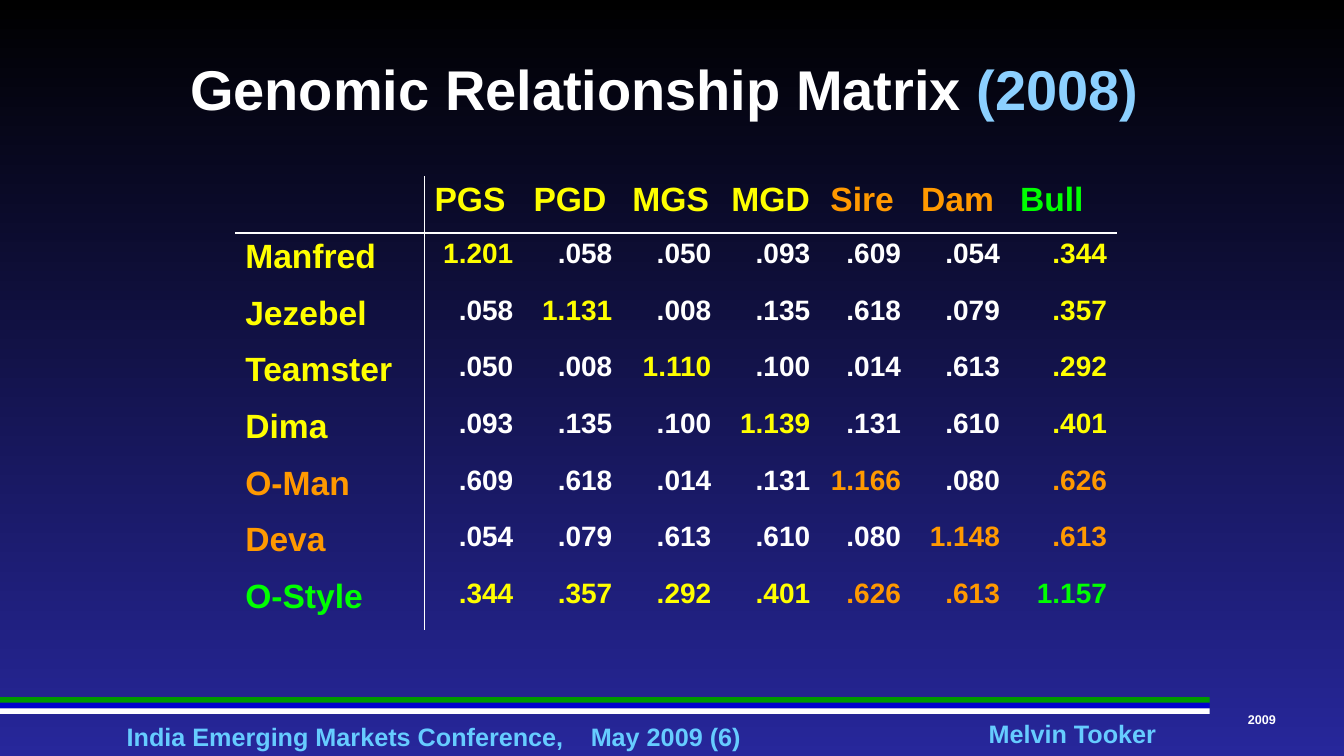
from lxml.etree import SubElement
from pptx import Presentation
from pptx.dml.color import RGBColor
from pptx.enum.shapes import MSO_SHAPE as Shape
from pptx.enum.text import MSO_ANCHOR as Anchor, MSO_AUTO_SIZE as AutoSize, PP_ALIGN as Align
from pptx.oxml.ns import qn
from pptx.util import Pt

BLACK = RGBColor(0x00, 0x00, 0x00)
NAVY = RGBColor(0x27, 0x27, 0x9B)
WHITE = RGBColor(0xFF, 0xFF, 0xFF)
YELLOW = RGBColor(0xFF, 0xFF, 0x00)
ORANGE = RGBColor(0xFF, 0x99, 0x00)
LIME = RGBColor(0x00, 0xFF, 0x00)
GREEN = RGBColor(0x00, 0x99, 0x00)
BLUE = RGBColor(0x00, 0x00, 0xCC)
SKY = RGBColor(0x66, 0xCC, 0xFF)
PALE_BLUE = RGBColor(0x8C, 0xD0, 0xFF)

FONT = "Arial"
ROLES = ["PGS", "PGD", "MGS", "MGD", "Sire", "Dam", "Bull"]
ANIMALS = ["Manfred", "Jezebel", "Teamster", "Dima", "O-Man", "Deva", "O-Style"]
GROUP_COLORS = [YELLOW] * 4 + [ORANGE] * 2 + [LIME]
RELATIONSHIPS = [
    "1.201 .058 .050 .093 .609 .054 .344",
    ".058 1.131 .008 .135 .618 .079 .357",
    ".050 .008 1.110 .100 .014 .613 .292",
    ".093 .135 .100 1.139 .131 .610 .401",
    ".609 .618 .014 .131 1.166 .080 .626",
    ".054 .079 .613 .610 .080 1.148 .613",
    ".344 .357 .292 .401 .626 .613 1.157",
]
COLUMN_WIDTHS = [135.2, 70.7, 70.7, 70.7, 70.7, 64.8, 70.7, 76.5]
ROW_HEIGHT = 40.5


def add_run(para, text, size, color):
    span = para.add_run()
    span.text = text
    font = span.font
    font.name, font.size, font.bold = FONT, Pt(size), True
    font.color.rgb = color


def paint_background(slide):
    fill = slide.background.fill
    fill.gradient()
    fill.gradient_angle = 270
    for stop, color in zip(fill.gradient_stops, (BLACK, NAVY)):
        stop.color.rgb = color


def add_stripe(slide, top, color):
    stripe = slide.shapes.add_shape(Shape.RECTANGLE, 0, Pt(top), Pt(864), Pt(4))
    stripe.shadow.inherit = False
    stripe.fill.solid()
    stripe.fill.fore_color.rgb = color
    stripe.line.fill.background()


def add_label(slide, bounds, text, size, color, align, tab=None):
    box = slide.shapes.add_textbox(*(Pt(length) for length in bounds))
    frame = box.text_frame
    frame.margin_left = frame.margin_right = frame.margin_top = frame.margin_bottom = 0
    frame.vertical_anchor = Anchor.MIDDLE
    frame.word_wrap = True
    para = frame.paragraphs[0]
    para.alignment = align
    if tab:
        tabs = SubElement(para._p.get_or_add_pPr(), qn("a:tabLst"))
        SubElement(tabs, qn("a:tab"), pos=str(Pt(tab)), algn="l")
    add_run(para, text, size, color)


def set_title(slide):
    title = slide.shapes.title
    title.left, title.top, title.width, title.height = Pt(24), Pt(18), Pt(912), Pt(90)
    frame = title.text_frame
    frame.vertical_anchor = Anchor.MIDDLE
    frame.auto_size = AutoSize.NONE
    para = frame.paragraphs[0]
    para.alignment = Align.CENTER
    add_run(para, "Genomic Relationship Matrix ", 40, WHITE)
    add_run(para, "(2008) ", 40, PALE_BLUE)


def set_borders(cell, drawn):
    properties = cell._tc.get_or_add_tcPr()
    for side in "LRTB":
        line = SubElement(properties, qn(f"a:ln{side}"), w=str(Pt(1)))
        if side in drawn:
            fill = SubElement(line, qn("a:solidFill"))
            SubElement(fill, qn("a:srgbClr"), val=str(WHITE))
        else:
            SubElement(line, qn("a:noFill"))


def cell_content(row, column, values):
    animal, role = row - 1, column - 1
    if row == 0:
        return ROLES[role], 24, GROUP_COLORS[role], Align.LEFT
    if column == 0:
        return ANIMALS[animal], 24, GROUP_COLORS[animal], Align.LEFT
    bull = len(ROLES) - 1
    highlighted = animal == role or bull in (animal, role)
    color = GROUP_COLORS[min(animal, role)] if highlighted else WHITE
    return values[animal][role], 20, color, Align.RIGHT


def add_matrix(slide):
    count = len(ROLES) + 1
    table = slide.shapes.add_table(
        count, count, Pt(168), Pt(126), Pt(sum(COLUMN_WIDTHS)), Pt(ROW_HEIGHT * count)
    ).table
    table.first_row = table.horz_banding = False
    for column, width in zip(table.columns, COLUMN_WIDTHS):
        column.width = Pt(width)
    for row in table.rows:
        row.height = Pt(ROW_HEIGHT)
    values = [line.split() for line in RELATIONSHIPS]
    for row in range(count):
        for column in range(count):
            cell = table.cell(row, column)
            set_borders(cell, {0: "B", 1: "T"}.get(row, "") + {0: "R", 1: "L"}.get(column, ""))
            cell.fill.background()
            if row or column:
                text, size, color, align = cell_content(row, column, values)
                para = cell.text_frame.paragraphs[0]
                para.alignment = align
                add_run(para, text, size, color)


def main():
    deck = Presentation()
    deck.slide_width, deck.slide_height = Pt(960), Pt(540)
    slide = deck.slides.add_slide(deck.slide_layouts[5])
    paint_background(slide)
    add_label(slide, (90.5, 515, 565, 21.6), "India Emerging Markets Conference,\tMay 2009 (6)",
              18, SKY, Align.LEFT, tab=331.5)
    add_label(slide, (705, 512.8, 122, 21.6), "Melvin Tooker", 18, SKY, Align.CENTER)
    add_label(slide, (888, 508.5, 26.5, 10.8), "2009", 9, WHITE, Align.CENTER)
    for index, color in enumerate((GREEN, BLUE, WHITE)):
        add_stripe(slide, 498 + 4 * index, color)
    set_title(slide)
    add_matrix(slide)
    deck.save("out.pptx")


if __name__ == "__main__":
    main()
